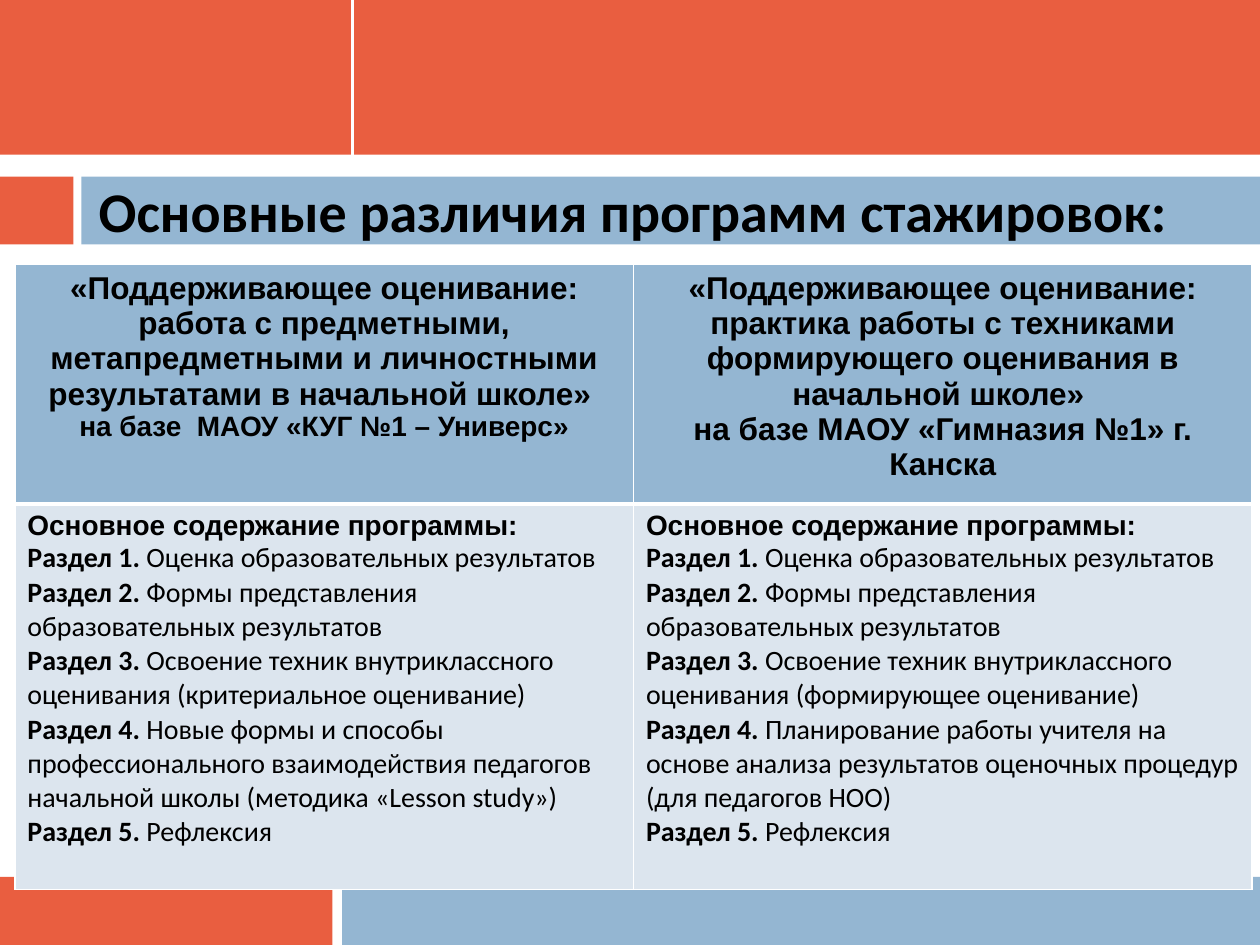
from lxml import etree
from pptx import Presentation
from pptx import util as u
from pptx.dml.color import RGBColor
from pptx.enum import shapes, text
from pptx.oxml import ns

ORANGE = RGBColor(0xE9, 0x5E, 0x40)
BLUE = RGBColor(0x94, 0xB6, 0xD2)
PALE_BLUE = RGBColor(0xDC, 0xE5, 0xEE)
WHITE = RGBColor(0xFF, 0xFF, 0xFF)
BLACK = RGBColor(0x00, 0x00, 0x00)

WIDTH, HEIGHT = 25.4, 19.05
BAND_TOP, BAND_HEIGHT = 3.56, 1.37
FOOTER_TOP = HEIGHT - BAND_HEIGHT
TABLE_LEFT, TABLE_WIDTH = 0.3, 24.94

# Left, top, width, height in centimetres, and colour
BANDS = [
    (0, FOOTER_TOP, 6.7, BAND_HEIGHT, ORANGE),
    (6.9, FOOTER_TOP, WIDTH - 6.9, BAND_HEIGHT, BLUE),
    (0, 0, WIDTH, 3.12, ORANGE),
    (0, BAND_TOP, 1.48, BAND_HEIGHT, ORANGE),
    (1.64, BAND_TOP, WIDTH - 1.64, BAND_HEIGHT, BLUE),
]

TITLE = {"size": u.Pt(32), "name": "Calibri", "bold": True}
HEADER = {"size": u.Pt(18), "name": "Arial", "bold": True}
SUBHEADER = {**HEADER, "size": u.Pt(16)}
SECTION = {"size": u.Pt(16), "name": "Calibri", "bold": True}
BODY = {**SECTION, "bold": False}

# Each program: header lines with their formats, then section names
PROGRAMS = [
    (
        [("«Поддерживающее оценивание: работа с предметными, метапредметными "
          "и личностными результатами в начальной школе» ", HEADER),
         ("на базе  МАОУ «КУГ №1 – Универс»", SUBHEADER)],
        ["Оценка образовательных результатов",
         "Формы представления образовательных результатов",
         "Освоение техник внутриклассного оценивания (критериальное оценивание)",
         "Новые формы и способы профессионального взаимодействия педагогов "
         "начальной школы (методика «Lesson study»)",
         "Рефлексия"],
    ),
    (
        [("«Поддерживающее оценивание: практика работы с техниками "
          "формирующего оценивания в начальной школе» ", HEADER),
         ("на базе МАОУ «Гимназия №1» г. Канска", HEADER)],
        ["Оценка образовательных результатов",
         "Формы представления образовательных результатов",
         "Освоение техник внутриклассного оценивания (формирующее оценивание)",
         "Планирование работы учителя на основе анализа результатов "
         "оценочных процедур (для педагогов НОО)",
         "Рефлексия"],
    ),
]


def add_band(slide, left, top, width, height, color):
    shape = slide.shapes.add_shape(
        shapes.MSO_SHAPE.RECTANGLE,
        u.Cm(left), u.Cm(top), u.Cm(width), u.Cm(height))
    shape.shadow.inherit = False
    shape.fill.solid()
    shape.fill.fore_color.rgb = color
    shape.line.fill.background()


def add_divider(slide, x, bottom):
    line = slide.shapes.add_connector(
        shapes.MSO_CONNECTOR.STRAIGHT, u.Cm(x), 0, u.Cm(x), u.Cm(bottom))
    line.line.color.rgb = WHITE
    line.line.width = u.Pt(1.5)
    etree.SubElement(line._element.spPr, ns.qn("a:effectLst"))


def write_paragraphs(frame, paragraphs, alignment):
    """Fill a text frame from lists of (wording, format) runs."""
    frame.word_wrap = True
    for index, runs in enumerate(paragraphs):
        paragraph = frame.add_paragraph() if index else frame.paragraphs[0]
        paragraph.alignment = alignment
        for wording, style in runs:
            run = paragraph.add_run()
            run.text = wording
            run.font.color.rgb = BLACK
            for attribute, value in style.items():
                setattr(run.font, attribute, value)


def add_title(slide):
    box = slide.shapes.add_textbox(
        u.Cm(TABLE_LEFT), u.Cm(3.43), u.Cm(TABLE_WIDTH), u.Cm(1.6))
    write_paragraphs(box.text_frame,
                     [[("Основные различия программ стажировок:", TITLE)]],
                     text.PP_ALIGN.CENTER)


def style_cell(cell, color, border_widths):
    properties = cell._tc.get_or_add_tcPr()
    for side, width in border_widths.items():
        border = etree.SubElement(properties, ns.qn(f"a:{side}"),
                                  w=str(u.Pt(width)))
        fill = etree.SubElement(border, ns.qn("a:solidFill"))
        etree.SubElement(fill, ns.qn("a:srgbClr"), val=str(WHITE))
    cell.fill.solid()
    cell.fill.fore_color.rgb = color


def add_program_table(slide):
    row_heights = (4.5, 7.77)
    table = slide.shapes.add_table(
        2, len(PROGRAMS), u.Cm(TABLE_LEFT), u.Cm(5.33),
        u.Cm(TABLE_WIDTH), u.Cm(sum(row_heights))).table
    for row, height in zip(table.rows, row_heights):
        row.height = u.Cm(height)

    for column, (header, sections) in enumerate(PROGRAMS):
        # Program name and host school
        cell = table.cell(0, column)
        style_cell(cell, BLUE, {"lnL": 1, "lnR": 1, "lnT": 1, "lnB": 3})
        write_paragraphs(cell.text_frame, [[line] for line in header],
                         text.PP_ALIGN.CENTER)

        # Program content
        content = [[("Основное содержание программы:", SUBHEADER)]]
        content += [[(f"Раздел {number}. ", SECTION), (name, BODY)]
                    for number, name in enumerate(sections, 1)]
        cell = table.cell(1, column)
        style_cell(cell, PALE_BLUE, {"lnL": 1, "lnR": 1, "lnT": 3, "lnB": 1})
        write_paragraphs(cell.text_frame, content, text.PP_ALIGN.LEFT)


def main():
    presentation = Presentation()
    presentation.slide_width = u.Cm(WIDTH)
    presentation.slide_height = u.Cm(HEIGHT)
    slide = presentation.slides.add_slide(presentation.slide_layouts[6])

    # Background bands
    for band in BANDS:
        add_band(slide, *band)
    add_divider(slide, 7.11, 3.12)

    # Title and comparison
    add_title(slide)
    add_program_table(slide)
    presentation.save("out.pptx")


if __name__ == "__main__":
    main()
